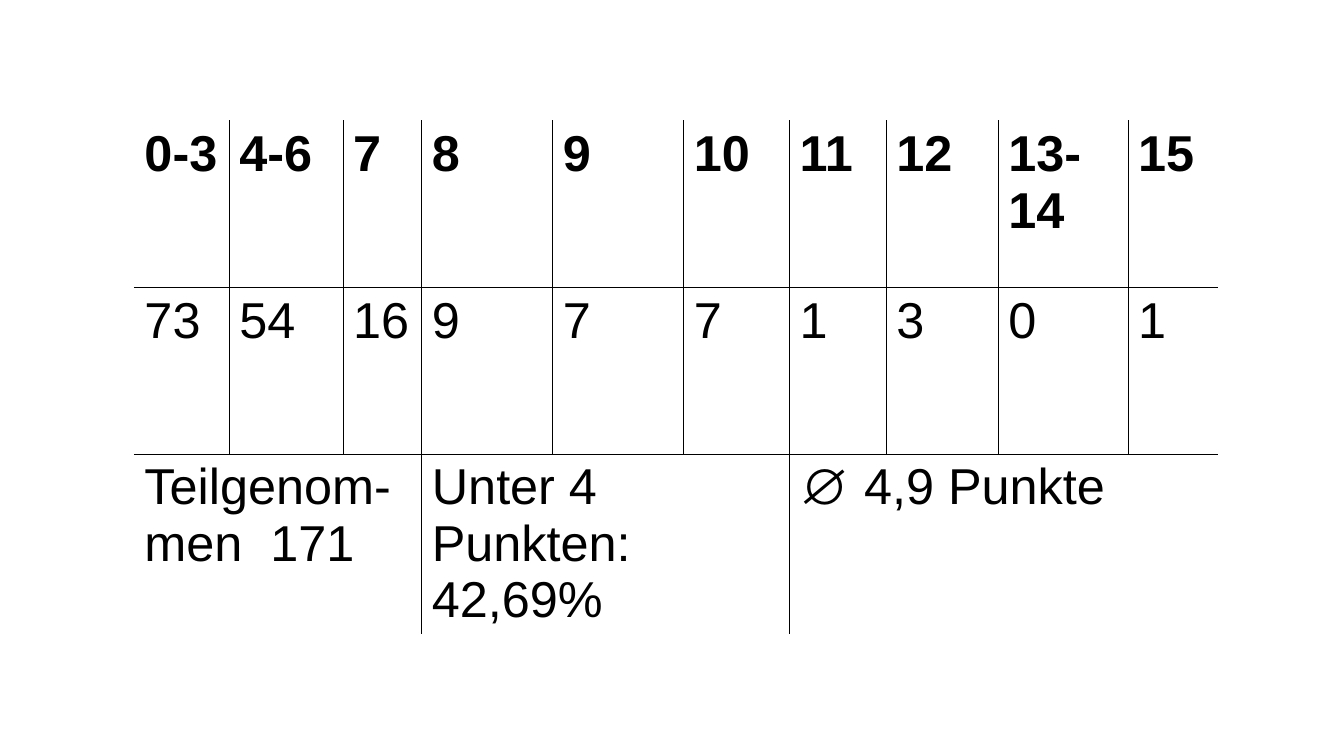
from pptx import Presentation
from pptx.dml.color import RGBColor
from pptx.oxml import parse_xml
from pptx.oxml.ns import nsdecls
from pptx.util import Pt

BLACK, WHITE = "000000", "FFFFFF"
COLUMNS = [67.7, 81.4, 56.2, 93.6, 93.6, 75.6, 69.1, 79.9, 75.6, 16.6, 64.1]
ROWS = [119, 119, 129]
POINTS = ["0-3", "4-6", "7", "8", "9", "10", "11", "12", "13-14", "", "15"]
COUNTS = ["73", "54", "16", "9", "7", "7", "1", "3", "0", "", "1"]
SUMMARY = [
    (0, 2, "Teilgenom-men  171"),
    (3, 5, "Unter 4 Punkten:\n42,69%"),
    (6, 10, "∅ 4,9 Punkte"),
]
SCORE_EDGES = {1, 2, 3, 4, 5, 6, 7, 8, 10}
COLUMN_EDGES = [SCORE_EDGES, SCORE_EDGES, {3, 6}]
ROW_EDGES = {1, 2}


def color(value):
    return RGBColor.from_string(value)


class Builder:
    font = "Arial"
    size = 36

    def __init__(self, prs):
        self.s = prs.slides.add_slide(prs.slide_layouts[6])

    def table(self, left, top, columns, rows):
        frame = self.s.shapes.add_table(
            len(rows), len(columns), Pt(left), Pt(top), Pt(sum(columns)), Pt(sum(rows))
        )
        table = frame.table
        table.first_row = table.horz_banding = False
        for column, width in zip(table.columns, columns):
            column.width = Pt(width)
        for row, height in zip(table.rows, rows):
            row.height = Pt(height)
        return table

    def text(self, cell, text, bold=False):
        tf = cell.text_frame
        tf.text = text
        for p in tf.paragraphs:
            p.font.size = Pt(self.size)
            for r in p.runs:
                r.font.name = self.font
                r.font.size = Pt(self.size)
                r.font.bold = bold
                r.font.color.rgb = color(BLACK)

    def frame(self, cell, edges):
        cell.fill.solid()
        cell.fill.fore_color.rgb = color(WHITE)
        tc_pr = cell._tc.get_or_add_tcPr()
        for i, (side, visible) in enumerate(zip("LRTB", edges)):
            line = BLACK if visible else WHITE
            tc_pr.insert(i, parse_xml(
                f'<a:ln{side} {nsdecls("a")} w="{Pt(1)}"><a:solidFill>'
                f'<a:srgbClr val="{line}"/></a:solidFill></a:ln{side}>'
            ))


def main():
    prs = Presentation()
    prs.slide_width, prs.slide_height = Pt(960), Pt(540)
    b = Builder(prs)
    table = b.table(96, 86.4, COLUMNS, ROWS)

    for row, column_edges in enumerate(COLUMN_EDGES):
        for col in range(len(COLUMNS)):
            b.frame(table.cell(row, col), [
                col in column_edges,
                col + 1 in column_edges,
                row in ROW_EDGES,
                row + 1 in ROW_EDGES,
            ])
    for row, values in enumerate([POINTS, COUNTS]):
        for col, value in enumerate(values):
            b.text(table.cell(row, col), value, bold=row == 0)
    for first, last, value in SUMMARY:
        cell = table.cell(2, first)
        cell.merge(table.cell(2, last))
        b.text(cell, value)

    prs.save("out.pptx")


if __name__ == "__main__":
    main()
